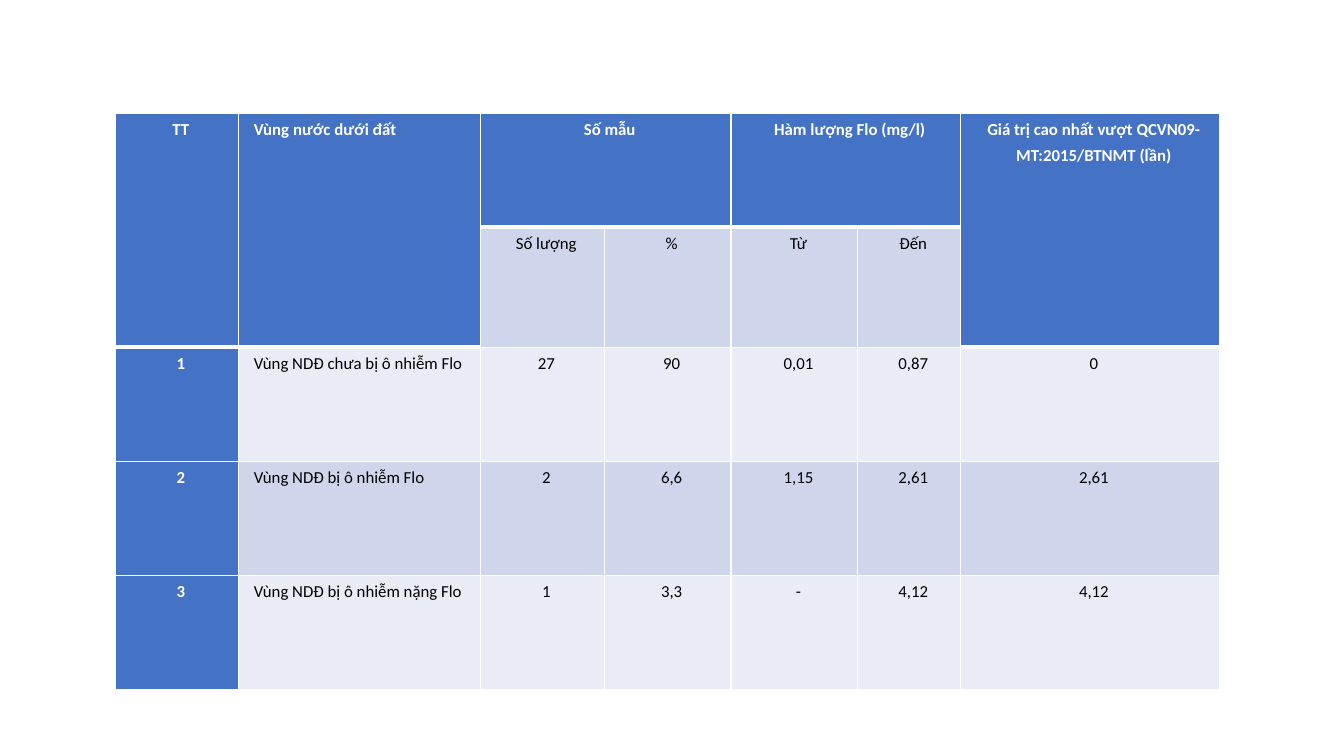
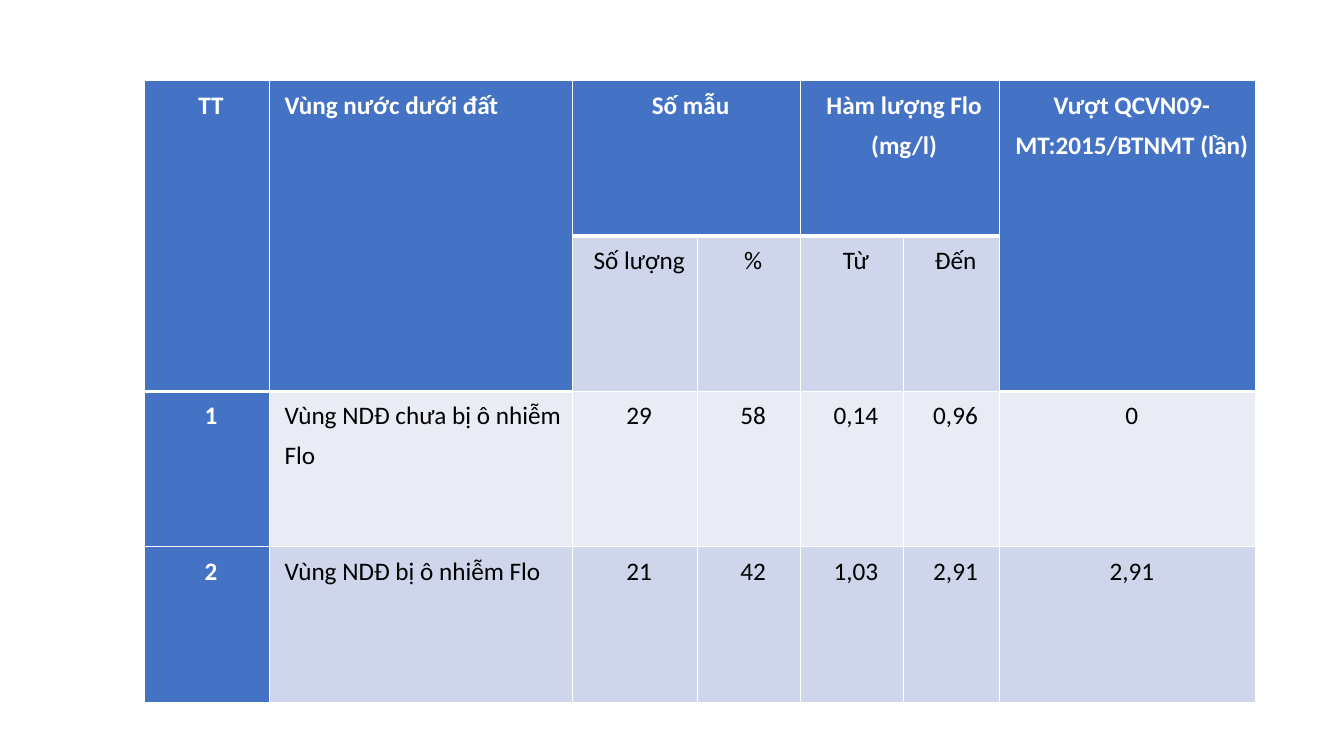
from pptx import Presentation
from pptx.dml.color import RGBColor
from pptx.enum.text import PP_ALIGN
from pptx.oxml import parse_xml
from pptx.oxml.ns import nsdecls
from pptx.util import Inches, Pt

SLIDE_WIDTH = Inches(13.33)
SLIDE_HEIGHT = Inches(7.5)
FONT = "Calibri"
COLORS = {
    "header": "4472C4",
    "band_dark": "CFD5EA",
    "band_light": "E9EBF5",
    "white": "FFFFFF",
    "black": "000000",
}
HEADER_ROWS = 2
SUBHEADINGS = ["Số lượng", "%", "Từ", "Đến"]
HEADER_SPANS = [
    ((0, 0), (1, 0)),
    ((0, 1), (1, 1)),
    ((0, 2), (0, 3)),
    ((0, 4), (0, 5)),
    ((0, 6), (1, 6)),
]


def is_header(row, column):
    return row == 0 or (row == 1 and column in (0, 1, 6))


def fill_name(row, column):
    if is_header(row, column) or column == 0:
        return "header"
    return "band_dark" if row % 2 else "band_light"


def add_borders(cell, top, bottom):
    properties = cell._tc.get_or_add_tcPr()
    widths = {"lnL": 1, "lnR": 1, "lnT": top, "lnB": bottom}
    for position, (edge, width) in enumerate(widths.items()):
        line = parse_xml(
            f'<a:{edge} {nsdecls("a")} w="{Pt(width)}"><a:solidFill>'
            f'<a:srgbClr val="{COLORS["white"]}"/></a:solidFill></a:{edge}>'
        )
        properties.insert(position, line)


def style_cell(cell, row, column):
    cell.margin_left = cell.margin_right = Inches(0.07)
    cell.margin_top = cell.margin_bottom = 0
    cell.fill.solid()
    cell.fill.fore_color.rgb = RGBColor.from_string(COLORS[fill_name(row, column)])
    top = 3 if row and is_header(row - 1, column) else 1
    bottom = 3 if is_header(row, column) else 1
    add_borders(cell, top, bottom)


def write_cell(cell, text, size, alignment, emphasized):
    para = cell.text_frame.paragraphs[0]
    para._p.get_or_add_pPr().set("marL", str(Inches(0.08)))
    para.alignment = alignment
    para.line_spacing = 1.3
    para.space_after = Pt(6)
    span = para.add_run()
    span.text = text
    span.font.name = FONT
    span.font.size = Pt(size)
    span.font.bold = emphasized
    color = COLORS["white" if emphasized else "black"]
    span.font.color.rgb = RGBColor.from_string(color)


def add_table_frame(page, area, columns, rows):
    left, top, width, height = (
        round(share / 100 * side)
        for share, side in zip(area, (SLIDE_WIDTH, SLIDE_HEIGHT) * 2)
    )
    table = page.shapes.add_table(
        len(rows), len(columns), left, top, width, height
    ).table
    for column, weight in zip(table.columns, columns):
        column.width = round(width * weight / sum(columns))
    for row, weight in zip(table.rows, rows):
        row.height = round(height * weight / sum(rows))
    return table


def add_fluoride_page(deck, area, columns, rows, size, name_alignment, excess, zones):
    page = deck.slides.add_slide(deck.slide_layouts[6])
    table = add_table_frame(page, area, columns, rows)
    headings = ["TT", "Vùng nước dưới đất", "Số mẫu", "", "Hàm lượng Flo (mg/l)", "", excess]
    numbered = [[str(number), *zone] for number, zone in enumerate(zones, 1)]
    content = [headings, ["", "", *SUBHEADINGS, ""], *numbered]
    for start, end in HEADER_SPANS:
        table.cell(*start).merge(table.cell(*end))
    for row, texts in enumerate(content):
        for column, text in enumerate(texts):
            cell = table.cell(row, column)
            style_cell(cell, row, column)
            if text:
                alignment = name_alignment if column == 1 else PP_ALIGN.CENTER
                emphasized = fill_name(row, column) == "header"
                write_cell(cell, text, size, alignment, emphasized)


def main():
    deck = Presentation()
    deck.slide_width = SLIDE_WIDTH
    deck.slide_height = SLIDE_HEIGHT
    add_fluoride_page(
        deck,
        area=(8.55, 14.98, 82.18, 76.2),
        columns=[1.23, 2.4, 1.23, 1.26, 1.26, 1.02, 2.57],
        rows=[1.13, 1.19, 1.13, 1.13, 1.13],
        size=12,
        name_alignment=PP_ALIGN.JUSTIFY,
        excess="Giá trị cao nhất vượt QCVN09-MT:2015/BTNMT (lần)",
        zones=[
            ["Vùng NDĐ chưa bị ô nhiễm Flo", "27", "90", "0,01", "0,87", "0"],
            ["Vùng NDĐ bị ô nhiễm Flo", "2", "6,6", "1,15", "2,61", "2,61"],
            ["Vùng NDĐ bị ô nhiễm nặng Flo", "1", "3,3", "-", "4,12", "4,12"],
        ],
    )
    zones = [
        ["Vùng NDĐ chưa bị ô nhiễm Flo", "29", "58", "0,14", "0,96", "0"],
        ["Vùng NDĐ bị ô nhiễm Flo", "21", "42", "1,03", "2,91", "2,91"],
    ]
    add_fluoride_page(
        deck,
        area=(10.76, 10.7, 82.68, 82.2),
        columns=[1.24, 3.01, 1.24, 1.02, 1.02, 0.96, 2.54],
        rows=[1] * (HEADER_ROWS + len(zones)),
        size=18,
        name_alignment=PP_ALIGN.LEFT,
        excess="Vượt QCVN09-MT:2015/BTNMT (lần)",
        zones=zones,
    )
    deck.save("out.pptx")


if __name__ == "__main__":
    main()
